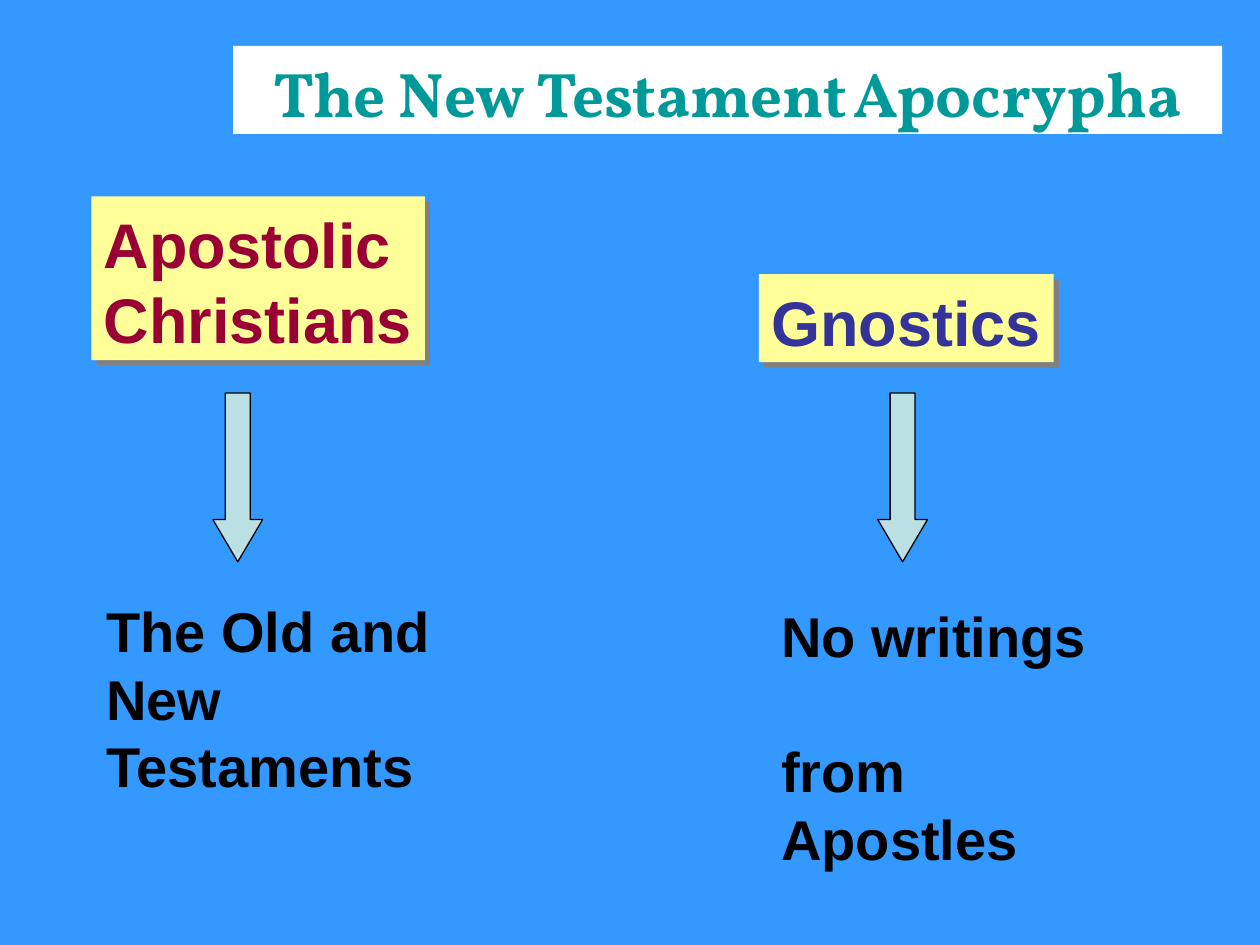
from lxml import etree
from pptx import Presentation
from pptx.dml.color import RGBColor
from pptx.enum.shapes import MSO_SHAPE
from pptx.enum.text import MSO_ANCHOR, PP_ALIGN
from pptx.oxml.ns import qn
from pptx.util import Pt

RECT, DOWN_ARROW = MSO_SHAPE.RECTANGLE, MSO_SHAPE.DOWN_ARROW
TOP = MSO_ANCHOR.TOP
LEFT, CENTER = PP_ALIGN.LEFT, PP_ALIGN.CENTER

BLUE = RGBColor(0x33, 0x99, 0xFF)
WHITE = RGBColor(0xFF, 0xFF, 0xFF)
YELLOW = RGBColor(0xFF, 0xFF, 0x99)
PALE_TEAL = RGBColor(0xBB, 0xE0, 0xE3)
TEAL = RGBColor(0x00, 0x99, 0x99)
MAROON = RGBColor(0x99, 0x00, 0x33)
INDIGO = RGBColor(0x33, 0x33, 0x99)
GRAY = RGBColor(0x80, 0x80, 0x80)
BLACK = RGBColor(0x00, 0x00, 0x00)


def add_run(p, text, size, color, font="Arial"):
    r = p.add_run()
    r.text = text
    r.font.name = font
    r.font.size = Pt(size)
    r.font.bold = True
    r.font.color.rgb = color


def add_lines(s, lines, size, color, spacing):
    """Write one left-aligned paragraph per line, at a fixed line pitch in points."""
    tf = s.text_frame
    tf.word_wrap = False
    tf.vertical_anchor = TOP
    tf.margin_top = Pt(5.2)
    for i, line in enumerate(lines):
        p = tf.paragraphs[0] if i == 0 else tf.add_paragraph()
        p.alignment = LEFT
        p.line_spacing = Pt(spacing)
        add_run(p, line, size, color)


prs = Presentation()
prs.slide_width, prs.slide_height = Pt(720), Pt(540)
slide = prs.slides.add_slide(prs.slide_layouts[6])
slide.background.fill.solid()
slide.background.fill.fore_color.rgb = BLUE
shapes = slide.shapes

# Group names with a hard shadow
groups = [
    (52.3, 112.2, 190.5, 93.6, ["Apostolic", "Christians"], MAROON),
    (433.7, 156.6, 168.5, 50.4, ["Gnostics"], INDIGO),
]
for x, y, w, h, lines, color in groups:
    s = shapes.add_shape(RECT, Pt(x), Pt(y), Pt(w), Pt(h))
    s.fill.solid()
    s.fill.fore_color.rgb = YELLOW
    s.line.fill.background()
    s.shadow.inherit = False
    effects = s._element.spPr.find(qn("a:effectLst"))
    shadow = etree.SubElement(effects, qn("a:outerShdw"), dist=str(Pt(4.2)),
                              dir="2700000", algn="ctr", rotWithShape="0")
    etree.SubElement(shadow, qn("a:srgbClr"), val=str(GRAY))
    add_lines(s, lines, 36, color, 43.2)

# Arrows from each group to its writings
for x in (121.7, 501.6):
    s = shapes.add_shape(DOWN_ARROW, Pt(x), Pt(224.6), Pt(28.4), Pt(96.5))
    s.adjustments[0], s.adjustments[1] = 0.5, 0.85
    s.fill.solid()
    s.fill.fore_color.rgb = PALE_TEAL
    s.line.color.rgb = BLACK
    s.line.width = Pt(0.75)
    s.shadow.inherit = False

# Writings of each group
old_new = shapes.add_textbox(Pt(53.7), Pt(335.5), Pt(273.6), Pt(124))
add_lines(old_new, ["The Old and", "New", "Testaments"], 32, BLACK, 38.6)
no_writings = shapes.add_textbox(Pt(439.4), Pt(338.4), Pt(197.3), Pt(160.6))
add_lines(no_writings, ["No writings", "from", "Apostles"], 32, BLACK, 38.6)
no_writings.text_frame.paragraphs[1].space_before = Pt(38.6)

# Title
s = shapes.add_shape(RECT, Pt(133.2), Pt(26.2), Pt(565.2), Pt(50.4))
s.fill.solid()
s.fill.fore_color.rgb = WHITE
s.line.fill.background()
s.shadow.inherit = False
tf = s.text_frame
tf.word_wrap = True
tf.vertical_anchor = TOP
tf.margin_top, tf.margin_bottom = Pt(5.2), Pt(0)
p = tf.paragraphs[0]
p.alignment = CENTER
for text, size in (("The New Testament", 36), (" ", 18), ("Apocrypha", 36)):
    add_run(p, text, size, TEAL, "Vollkorn")

prs.save("out.pptx")
